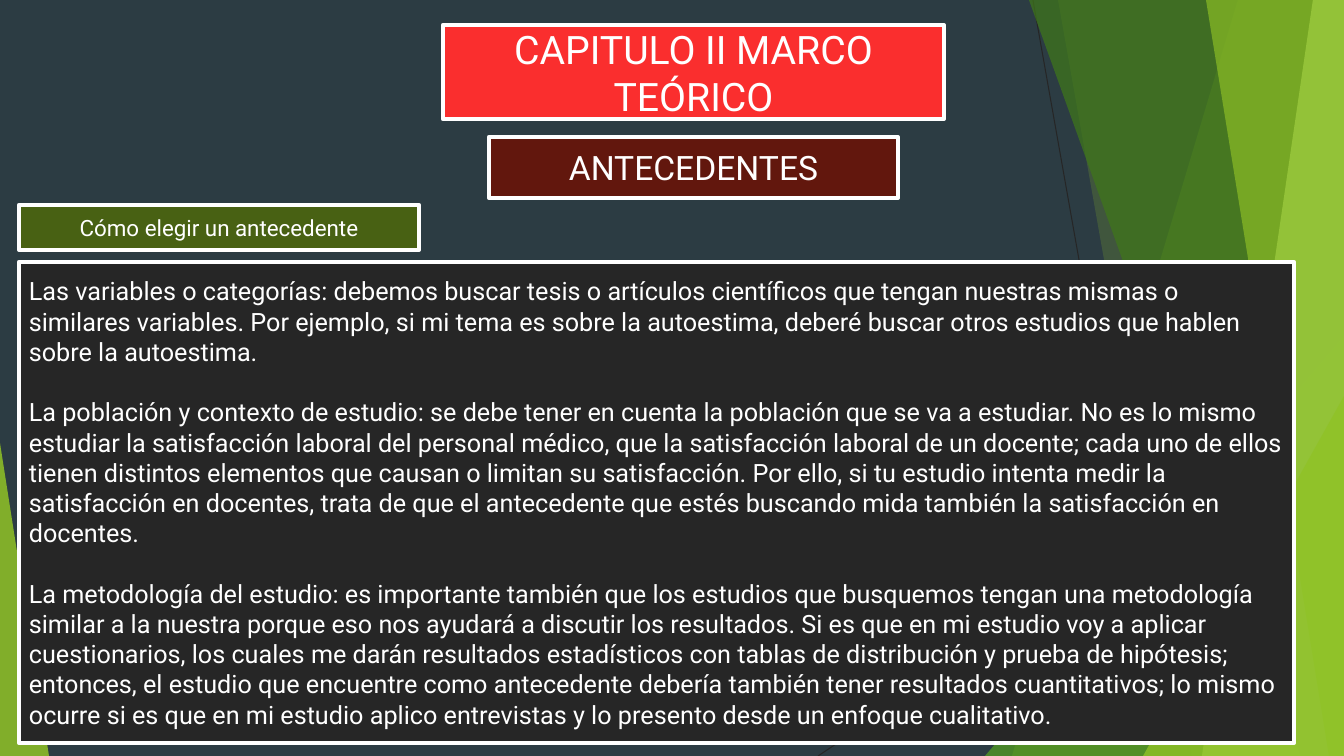
import lxml.etree
import pptx
import pptx.util
import pptx.dml.color
import pptx.enum.shapes
import pptx.enum.text
import pptx.oxml.ns

SCALE = 914400 / 100.8
WIDE, HIGH = 1344, 756
FONT = "Roboto"
WHITE = "FFFFFF"
GREEN = "90C226"
SHAPES = pptx.enum.shapes.MSO_SHAPE
ALIGN = pptx.enum.text.PP_ALIGN

ADVICE = [
    "Las variables o categorías: debemos buscar tesis o artículos científicos que tengan "
    "nuestras mismas o similares variables. Por ejemplo, si mi tema es sobre la autoestima, "
    "deberé buscar otros estudios que hablen sobre la autoestima.",
    "La población y contexto de estudio: se debe tener en cuenta la población que se va a "
    "estudiar. No es lo mismo estudiar la satisfacción laboral del personal médico, que la "
    "satisfacción laboral de un docente; cada uno de ellos tienen distintos elementos que "
    "causan o limitan su satisfacción. Por ello, si tu estudio intenta medir la satisfacción "
    "en docentes, trata de que el antecedente que estés buscando mida también la "
    "satisfacción en docentes.",
    "La metodología del estudio: es importante también que los estudios que busquemos tengan "
    "una metodología similar a la nuestra porque eso nos ayudará a discutir los resultados. "
    "Si es que en mi estudio voy a aplicar cuestionarios, los cuales me darán resultados "
    "estadísticos con tablas de distribución y prueba de hipótesis; entonces, el estudio que "
    "encuentre como antecedente debería también tener resultados cuantitativos; lo mismo "
    "ocurre si es que en mi estudio aplico entrevistas y lo presento desde un enfoque "
    "cualitativo.",
]


def px(count):
    return pptx.util.Emu(round(count * SCALE))


def color(code):
    return pptx.dml.color.RGBColor.from_string(code)


def add_node(parent, tag):
    return lxml.etree.SubElement(parent, pptx.oxml.ns.qn(tag))


def paint(shape, code, alpha=100):
    """Fill a shape with a colour at alpha percent opacity, without a line."""
    shape.shadow.inherit = False
    shape.line.fill.background()
    shape.fill.solid()
    shape.fill.fore_color.rgb = color(code)
    if alpha < 100:
        tone = shape._element.spPr.find(".//" + pptx.oxml.ns.qn("a:srgbClr"))
        add_node(tone, "a:alpha").set("val", str(alpha * 1000))


def add_line(slide, *ends):
    line = slide.shapes.add_connector(
        pptx.enum.shapes.MSO_CONNECTOR.STRAIGHT, *map(px, ends))
    line.line.color.rgb = color("262626")
    line.line.width = pptx.util.Pt(0.75)
    add_node(line._element.spPr, "a:effectLst")


def add_band(slide, top, base, code, alpha):
    """Fill from a slanted left edge to the right side of the slide."""
    pen = slide.shapes.build_freeform(top, 0, scale=SCALE)
    pen.add_line_segments([(WIDE, 0), (WIDE, HIGH), (base, HIGH)], close=True)
    paint(pen.convert_to_shape(), code, alpha)


def add_wedge(slide, left, top, width, tip, code, alpha):
    """Triangle standing on the bottom edge, its tip at 0 (left) to 1 (right)."""
    wedge = slide.shapes.add_shape(
        SHAPES.ISOSCELES_TRIANGLE, px(left), px(top), px(width), px(HIGH - top))
    wedge.adjustments[0] = tip
    paint(wedge, code, alpha)


def add_box(slide, place, code, texts, size, align=ALIGN.CENTER):
    box = slide.shapes.add_shape(SHAPES.RECTANGLE, *map(px, place))
    paint(box, code)
    box.line.color.rgb = color(WHITE)
    box.line.width = pptx.util.Pt(3)
    frame = box.text_frame
    frame.word_wrap = True
    frame.vertical_anchor = pptx.enum.text.MSO_ANCHOR.MIDDLE
    frame.text = "\n".join(texts)
    for index, para in enumerate(frame.paragraphs):
        para.alignment = align
        if index:
            para.space_before = pptx.util.Pt(size * 1.2)
        font = para.runs[0].font
        font.name = FONT
        font.size = pptx.util.Pt(size)
        font.color.rgb = color(WHITE)


def add_decor(slide):
    add_line(slide, 1033, 0, 1167, HIGH)
    add_line(slide, WIDE, 406, 818, HIGH)
    add_band(slide, 1238, 1012, GREEN, 30)
    add_band(slide, 1058, 1192, GREEN, 20)
    add_wedge(slide, 985, 336, 359, 1, "54A021", 72)
    add_band(slide, 1029, 1301, "3F7819", 70)
    add_band(slide, 1313, 1202, "C0E474", 70)
    add_band(slide, 1206, 1329, GREEN, 65)
    add_wedge(slide, 1143, 396, 201, 1, GREEN, 80)
    add_wedge(slide, 0, 443, 49, 0, GREEN, 85)


def main():
    deck = pptx.Presentation()
    deck.slide_width, deck.slide_height = px(WIDE), px(HIGH)
    slide = deck.slides.add_slide(deck.slide_layouts[6])
    slide.background.fill.solid()
    slide.background.fill.fore_color.rgb = color("2C3C43")
    add_decor(slide)
    add_box(slide, (443, 25, 501, 94), "FA2E2E", ["CAPITULO II MARCO TEÓRICO"], 28)
    add_box(slide, (489, 137, 409, 61), "62170D", ["ANTECEDENTES"], 24)
    add_box(slide, (19, 205, 400, 45), "486113", ["Cómo elegir un antecedente"], 16)
    add_box(slide, (19, 262, 1275, 481), "262626", ADVICE, 18, ALIGN.LEFT)
    deck.save("out.pptx")


if __name__ == "__main__":
    main()
